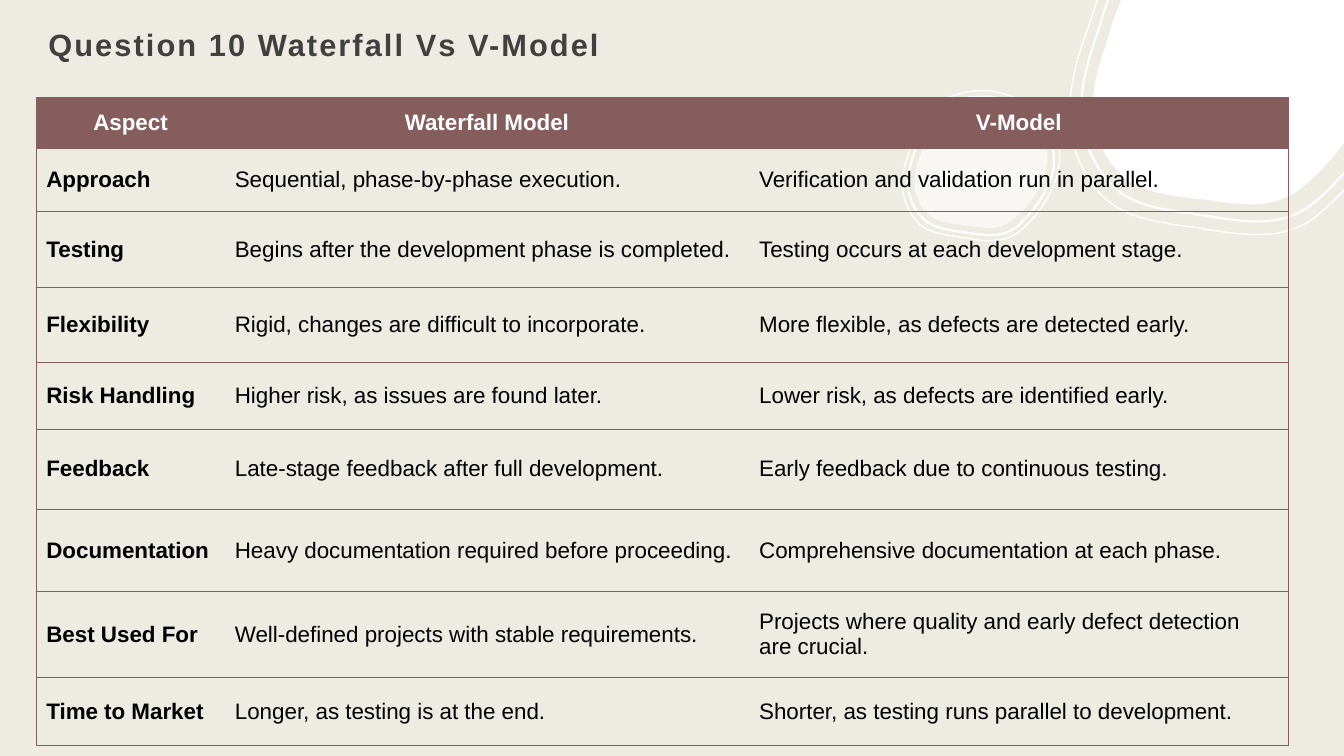
from lxml import etree
from pptx import Presentation
from pptx import util as u
from pptx.dml.color import RGBColor
from pptx.enum import text
from pptx.oxml import ns

BACKGROUND = RGBColor(0xEE, 0xEB, 0xE2)
WHITE = RGBColor(0xFF, 0xFF, 0xFF)
BLACK = RGBColor(0, 0, 0)
CHARCOAL = RGBColor(0x40, 0x40, 0x40)
MAROON = RGBColor(0x85, 0x5D, 0x5D)
FONT = "Arial"

large_blob = [
    (11.12, 0), (13.5, 0), (13.51, 0.01),
    (13.57, 0.12, 13.62, 0.24, 13.64, 0.36), (13.67, 0.51, 13.66, 0.67, 13.62, 0.84),
    (13.56, 1.05, 13.45, 1.27, 13.29, 1.47), (13.2, 1.59, 13.09, 1.71, 12.96, 1.82),
    (12.83, 1.94, 12.69, 2, 12.53, 2.02), (12.35, 2.04, 12.16, 2.01, 11.95, 1.98),
    (11.91, 1.98, 11.87, 1.97, 11.83, 1.97), (11.47, 1.92, 11.22, 1.88, 11.06, 1.67),
    (10.8, 1.35, 10.77, 0.99, 10.96, 0.47), (10.98, 0.4, 11, 0.34, 11.02, 0.27),
    (11.05, 0.18, 11.08, 0.1, 11.11, 0.03), (11.12, 0)]
large_inner_ring = [
    (11.04, -0.13), (13.57, -0.13), (13.64, -0.03),
    (13.72, 0.09, 13.77, 0.22, 13.79, 0.36), (13.83, 0.53, 13.82, 0.71, 13.78, 0.89),
    (13.71, 1.18, 13.55, 1.47, 13.32, 1.73), (13.24, 1.82, 13.16, 1.9, 13.07, 1.98),
    (12.92, 2.11, 12.78, 2.17, 12.59, 2.19), (12.4, 2.21, 12.19, 2.18, 11.96, 2.14),
    (11.92, 2.14, 11.87, 2.13, 11.83, 2.12), (11.43, 2.07, 11.16, 2.01, 10.97, 1.77),
    (10.69, 1.41, 10.65, 1.01, 10.85, 0.43), (10.87, 0.36, 10.9, 0.28, 10.92, 0.22),
    (10.96, 0.07, 11, -0.03, 11.04, -0.12)]
large_outer_ring = [
    (10.93, -0.13), (13.72, -0.13), (13.75, -0.09),
    (13.83, 0.04, 13.88, 0.18, 13.91, 0.33), (13.95, 0.51, 13.94, 0.71, 13.89, 0.91),
    (13.82, 1.22, 13.64, 1.53, 13.4, 1.81), (13.31, 1.91, 13.22, 2, 13.12, 2.09),
    (12.97, 2.23, 12.81, 2.3, 12.61, 2.32), (12.41, 2.34, 12.18, 2.31, 11.93, 2.27),
    (11.88, 2.26, 11.84, 2.25, 11.79, 2.25), (11.37, 2.19, 11.07, 2.13, 10.87, 1.87),
    (10.57, 1.49, 10.53, 1.05, 10.74, 0.42), (10.77, 0.34, 10.8, 0.26, 10.82, 0.19),
    (10.86, 0.07, 10.89, -0.02, 10.92, -0.1)]
small_inner_ring = [
    (9.73, 0.96),
    (9.76, 0.96, 9.78, 0.96, 9.81, 0.96), (9.91, 0.97, 10.01, 1, 10.1, 1.05),
    (10.2, 1.09, 10.27, 1.16, 10.33, 1.23), (10.39, 1.31, 10.43, 1.38, 10.44, 1.47),
    (10.46, 1.55, 10.46, 1.63, 10.44, 1.72), (10.4, 1.85, 10.33, 1.99, 10.22, 2.11),
    (10.19, 2.15, 10.15, 2.19, 10.11, 2.23), (10.04, 2.29, 9.97, 2.32, 9.88, 2.33),
    (9.79, 2.34, 9.69, 2.32, 9.58, 2.31), (9.56, 2.3, 9.54, 2.3, 9.52, 2.3),
    (9.34, 2.27, 9.21, 2.25, 9.12, 2.13), (8.99, 1.97, 8.97, 1.78, 9.07, 1.51),
    (9.08, 1.47, 9.09, 1.44, 9.1, 1.4), (9.14, 1.27, 9.16, 1.2, 9.24, 1.14),
    (9.31, 1.07, 9.4, 1.02, 9.5, 0.99), (9.58, 0.97, 9.65, 0.96, 9.73, 0.96)]
small_outer_ring = [
    (9.73, 0.9),
    (9.76, 0.9, 9.79, 0.9, 9.82, 0.9), (9.93, 0.92, 10.04, 0.95, 10.13, 1),
    (10.23, 1.05, 10.32, 1.12, 10.38, 1.2), (10.44, 1.27, 10.48, 1.36, 10.5, 1.45),
    (10.52, 1.54, 10.51, 1.63, 10.49, 1.72), (10.45, 1.87, 10.37, 2.01, 10.26, 2.15),
    (10.22, 2.19, 10.18, 2.24, 10.13, 2.28), (10.06, 2.34, 9.98, 2.38, 9.89, 2.38),
    (9.79, 2.4, 9.69, 2.38, 9.57, 2.36), (9.55, 2.36, 9.53, 2.36, 9.51, 2.35),
    (9.31, 2.32, 9.17, 2.3, 9.08, 2.18), (8.93, 1.99, 8.91, 1.79, 9.02, 1.5),
    (9.03, 1.46, 9.04, 1.42, 9.05, 1.39), (9.1, 1.24, 9.12, 1.17, 9.2, 1.1),
    (9.29, 1.02, 9.38, 0.97, 9.49, 0.94), (9.57, 0.91, 9.65, 0.9, 9.73, 0.9)]
small_blob = [
    (9.74, 1.03),
    (9.76, 1.03, 9.79, 1.03, 9.81, 1.03), (9.9, 1.04, 10, 1.06, 10.08, 1.1),
    (10.16, 1.15, 10.23, 1.2, 10.29, 1.27), (10.34, 1.33, 10.37, 1.4, 10.38, 1.48),
    (10.4, 1.55, 10.39, 1.63, 10.37, 1.7), (10.35, 1.8, 10.29, 1.91, 10.22, 2),
    (10.18, 2.06, 10.12, 2.11, 10.07, 2.16), (10, 2.22, 9.94, 2.25, 9.86, 2.26),
    (9.78, 2.27, 9.69, 2.25, 9.59, 2.24), (9.57, 2.24, 9.55, 2.24, 9.53, 2.23),
    (9.37, 2.21, 9.25, 2.19, 9.17, 2.09), (9.05, 1.94, 9.04, 1.77, 9.13, 1.53),
    (9.14, 1.5, 9.15, 1.47, 9.16, 1.44), (9.2, 1.32, 9.22, 1.26, 9.29, 1.2),
    (9.36, 1.14, 9.44, 1.09, 9.53, 1.06), (9.6, 1.04, 9.67, 1.03, 9.74, 1.03)]
outlines = [
    (large_blob, None, 100), (large_inner_ring, 1.5, None), (large_outer_ring, 1, None),
    (small_inner_ring, 1.5, None), (small_outer_ring, 1, None), (small_blob, None, 60)]

rows = [
    ("Aspect", "Waterfall Model", "V-Model"),
    ("Approach", "Sequential, phase-by-phase execution.",
     "Verification and validation run in parallel."),
    ("Testing", "Begins after the development phase is completed.",
     "Testing occurs at each development stage."),
    ("Flexibility", "Rigid, changes are difficult to incorporate.",
     "More flexible, as defects are detected early."),
    ("Risk Handling", "Higher risk, as issues are found later.",
     "Lower risk, as defects are identified early."),
    ("Feedback", "Late-stage feedback after full development.",
     "Early feedback due to continuous testing."),
    ("Documentation", "Heavy documentation required before proceeding.",
     "Comprehensive documentation at each phase."),
    ("Best Used For", "Well-defined projects with stable requirements.",
     "Projects where quality and early defect detection are crucial."),
    ("Time to Market", "Longer, as testing is at the end.",
     "Shorter, as testing runs parallel to development.")]
column_widths = [1.87, 5.2, 5.35]
row_heights = [0.5, 0.63, 0.75, 0.75, 0.66, 0.79, 0.82, 0.85, 0.68]


def bend_segments(shape, outline):
    lines = list(shape._element.iter(ns.qn("a:lnTo")))
    for line, segment in zip(lines, outline[1:]):
        if len(segment) == 6:
            curve = etree.Element(ns.qn("a:cubicBezTo"))
            for x, y in zip(segment[::2], segment[1::2]):
                etree.SubElement(curve, ns.qn("a:pt"), x=str(u.Inches(x) - shape.left),
                                 y=str(u.Inches(y) - shape.top))
            line.getparent().replace(line, curve)


def add_run(paragraph, words, size, color, bold):
    run = paragraph.add_run()
    run.text = words
    run.font.name = FONT
    run.font.size = u.Pt(size)
    run.font.bold = bold
    run.font.color.rgb = color
    return run


presentation = Presentation()
presentation.slide_width = u.Inches(13.33)
presentation.slide_height = u.Inches(7.5)
slide = presentation.slides.add_slide(presentation.slide_layouts[6])
slide.background.fill.solid()
slide.background.fill.fore_color.rgb = BACKGROUND

for outline, line_width, opacity in outlines:
    anchors = [(u.Inches(segment[-2]), u.Inches(segment[-1])) for segment in outline]
    builder = slide.shapes.build_freeform(*anchors[0])
    builder.add_line_segments(anchors[1:], close=True)
    shape = builder.convert_to_shape()
    bend_segments(shape, outline)
    shape.shadow.inherit = False
    if line_width:
        shape.fill.background()
        shape.line.color.rgb = WHITE
        shape.line.width = u.Pt(line_width)
    else:
        shape.line.fill.background()
        shape.fill.solid()
        shape.fill.fore_color.rgb = WHITE
        if opacity < 100:
            color = shape._element.spPr.find(ns.qn("a:solidFill")).find(ns.qn("a:srgbClr"))
            etree.SubElement(color, ns.qn("a:alpha"), val=str(opacity * 1000))

title = slide.shapes.add_textbox(u.Inches(0.36), u.Inches(0.1), u.Inches(7.98), u.Inches(0.62))
frame = title.text_frame
frame.word_wrap = True
frame.vertical_anchor = text.MSO_ANCHOR.BOTTOM
frame.margin_left = frame.margin_top = frame.margin_right = u.Inches(0.12)
frame.margin_bottom = u.Inches(0.1)
title_run = add_run(frame.paragraphs[0], "Question 10 Waterfall Vs V-Model", 22, CHARCOAL, True)
title_run.font._element.set("spc", "150")

table = slide.shapes.add_table(len(rows), len(column_widths), u.Inches(0.36), u.Inches(0.97),
                               u.Inches(sum(column_widths)), u.Inches(sum(row_heights))).table
table.horz_banding = False
for column, width in zip(table.columns, column_widths):
    column.width = u.Inches(width)
for row, height in zip(table.rows, row_heights):
    row.height = u.Inches(height)

for row_index, row_words in enumerate(rows):
    header = row_index == 0
    for column_index, words in enumerate(row_words):
        cell = table.cell(row_index, column_index)
        cell.vertical_anchor = text.MSO_ANCHOR.MIDDLE
        borders = {"lnL": column_index == 0, "lnR": column_index == 2, "lnT": True, "lnB": True}
        for tag, visible in borders.items():
            border = etree.SubElement(cell._tc.get_or_add_tcPr(), ns.qn("a:" + tag), w="9525")
            if visible:
                fill = etree.SubElement(border, ns.qn("a:solidFill"))
                etree.SubElement(fill, ns.qn("a:srgbClr"), val=str(MAROON))
            else:
                etree.SubElement(border, ns.qn("a:noFill"))
        if header:
            cell.fill.solid()
            cell.fill.fore_color.rgb = MAROON
        else:
            cell.fill.background()
        paragraph = cell.text_frame.paragraphs[0]
        paragraph.alignment = text.PP_ALIGN.CENTER if header else text.PP_ALIGN.LEFT
        add_run(paragraph, words, 16, WHITE if header else BLACK, header or column_index == 0)

presentation.save("out.pptx")
